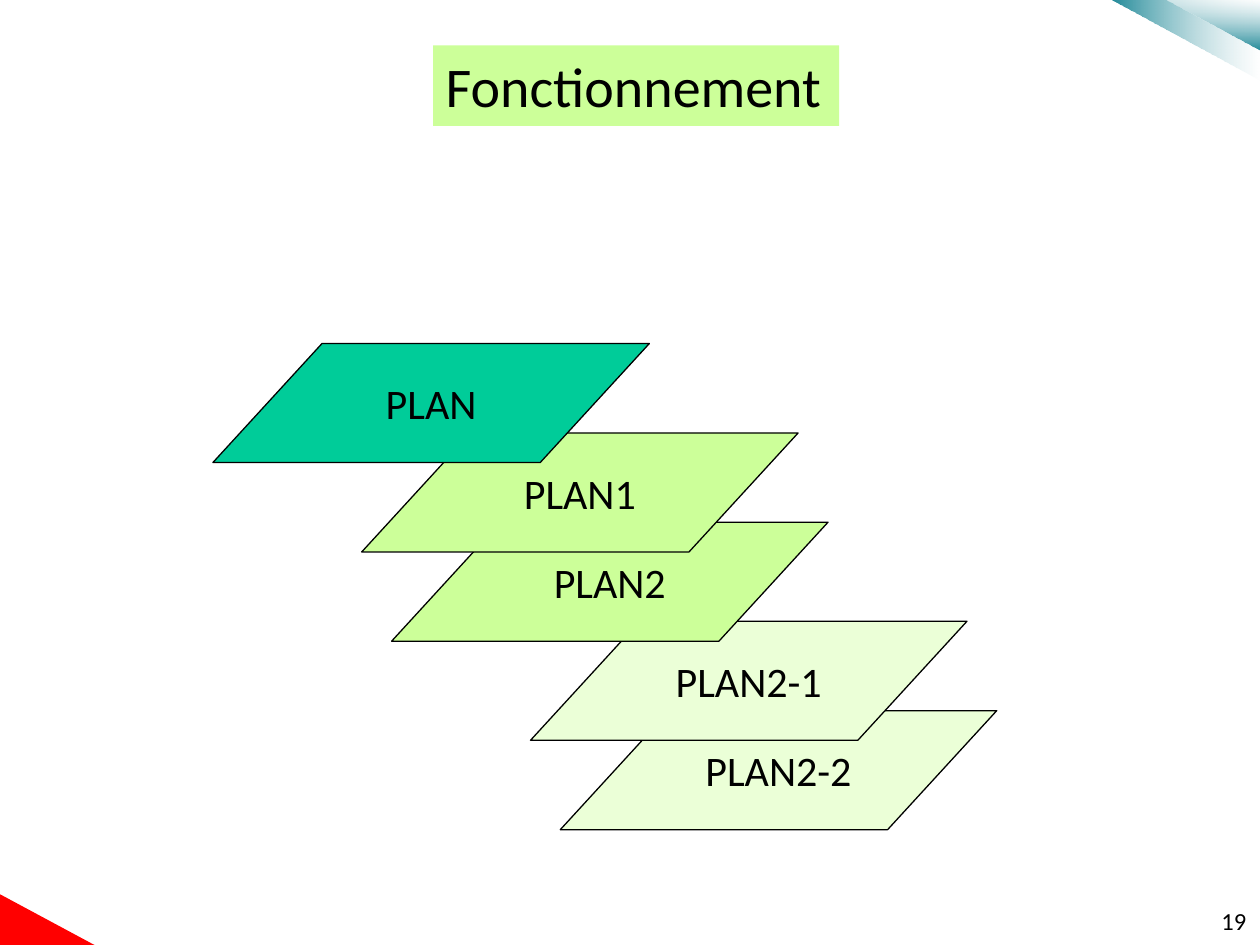
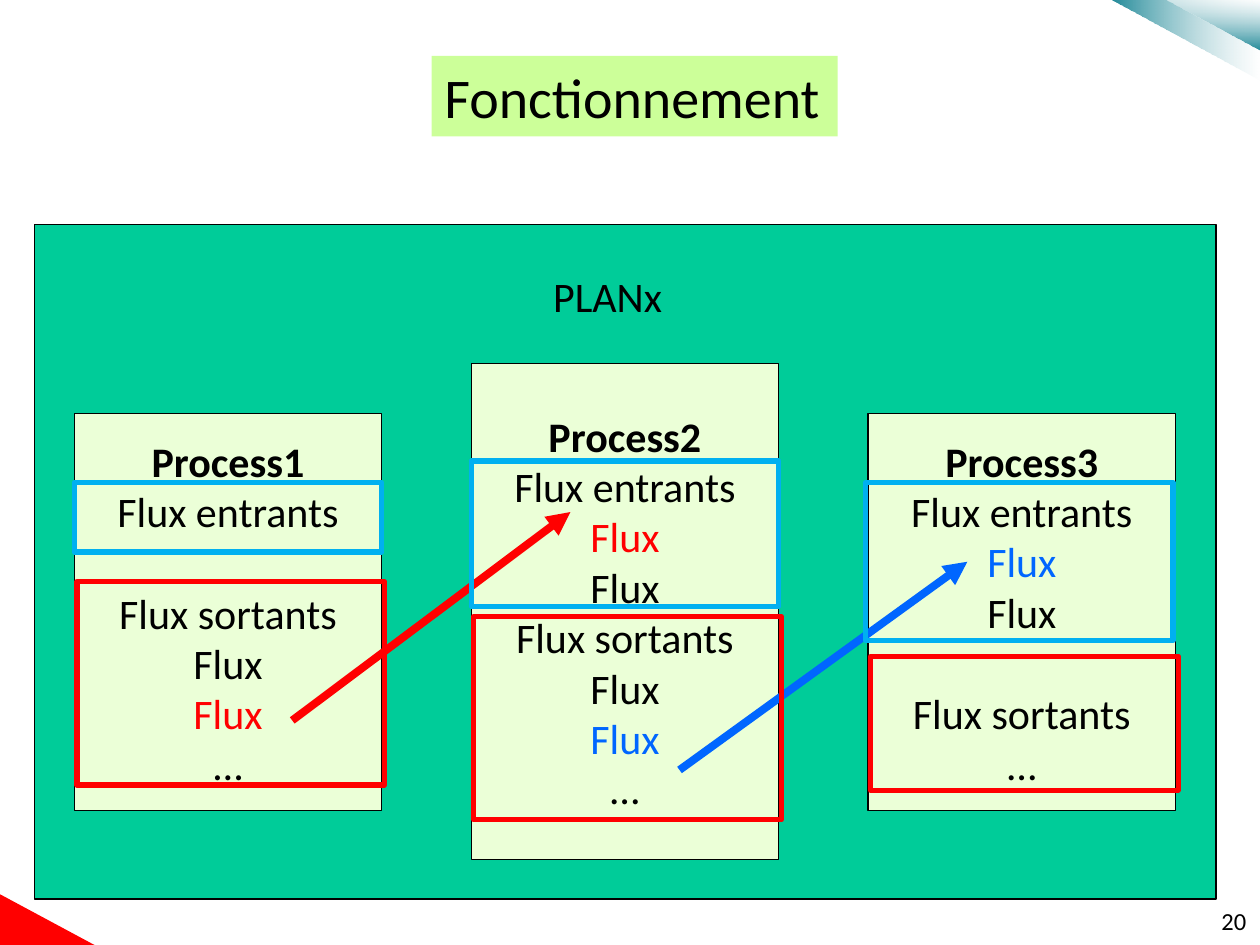
from lxml.etree import SubElement
from pptx import Presentation
from pptx.dml.color import RGBColor
from pptx.enum.shapes import MSO_CONNECTOR as CONN, MSO_SHAPE as SHAPE
from pptx.enum.text import MSO_ANCHOR as ANCHOR, MSO_AUTO_SIZE as AUTO, PP_ALIGN as ALIGN
from pptx.oxml.ns import qn
from pptx.util import Pt

FONT = "Calibri"
BLACK, WHITE, RED, BLUE, SKY = "000000", "FFFFFF", "FF0000", "0066FF", "00B0F0"
GREEN, LIME, PALE, TEAL = "00CC99", "CCFF99", "EBFFD7", "208998"
TITLE = "Fonctionnement"
TITLE_SIZE = (232, 46)

# Corner triangles: points, fill, and gradient angle and end opacity
CORNERS = [
    ([(0, 511), (54, 540), (0, 540)], RED, None),
    ([(634.3, 0), (720, 0), (720, 46)], TEAL, (0, 47)),
    ([(666, 0), (720, 0), (720, 28.8)], TEAL, (90, 57)),
]

# Plans from front to back: name, left, top, fill
PLAN_SIZE = (249.4, 68)
PLANS = [
    ("PLAN", 121.7, 196.3, GREEN),
    ("PLAN1", 206.7, 247.4, LIME),
    ("PLAN2", 223.8, 298.4, LIME),
    ("PLAN2-1", 303.2, 355, PALE),
    ("PLAN2-2", 320.2, 406.1, PALE),
]

# Processes: top and height of the box, (top, height) of both frames,
# then incoming and outgoing flows with their colours
PROCESS_LEFT, PROCESS_STEP, PROCESS_WIDTH = 42.5, 226.8, 175.7
FLOW, DOTS = ("Flux", BLACK), ("…", BLACK)
FLOW_RED, FLOW_BLUE = ("Flux", RED), ("Flux", BLUE)
PROCESSES = [
    dict(name="Process1", top=236.2, height=226.8, gap=29.3,
         frame_in=(0, 275.8, 39.6), frame_out=(1.5, 332.4, 116.2),
         flows_in=[], flows_out=[FLOW, FLOW_RED, DOTS]),
    dict(name="Process2", top=207.8, height=283.5, gap=0,
         frame_in=(0, 263.5, 83), frame_out=(1.5, 352.3, 116.2),
         flows_in=[FLOW_RED, FLOW], flows_out=[FLOW, FLOW_BLUE, DOTS]),
    dict(name="Process3", top=236.2, height=226.8, gap=29.3,
         frame_in=(-1.5, 275.8, 90.3), frame_out=(1.5, 375, 76.6),
         flows_in=[FLOW_BLUE, FLOW], flows_out=[DOTS]),
]
ARROWS = [
    ((167, 411.7), (326, 292.6), RED),
    ((388.3, 440), (552.8, 321), BLUE),
]


def rgb(color):
    return RGBColor.from_string(color)


def write(tf, text, size=24, color=BLACK, bold=False, align=ALIGN.CENTER,
          before=0, wrap=False, anchor=ANCHOR.MIDDLE, new=False):
    """Write one paragraph; new=True adds it after those already there."""
    tf.word_wrap, tf.auto_size, tf.vertical_anchor = wrap, AUTO.NONE, anchor
    p = tf.add_paragraph() if new else tf.paragraphs[0]
    p.alignment, p.space_before = align, Pt(before)
    r = p.add_run()
    r.text = text
    r.font.name, r.font.size, r.font.bold = FONT, Pt(size), bold
    r.font.color.rgb = rgb(color)


def add_box(slide, kind, box, fill=None, line=BLACK, width=0.75):
    sp = slide.shapes.add_shape(kind, *map(Pt, box))
    sp.shadow.inherit = False
    if fill:
        sp.fill.solid()
        sp.fill.fore_color.rgb = rgb(fill)
    else:
        sp.fill.background()
    sp.line.color.rgb, sp.line.width = rgb(line), Pt(width)
    return sp


def add_label(slide, text, box, **style):
    tb = slide.shapes.add_textbox(*map(Pt, box))
    write(tb.text_frame, text, anchor=ANCHOR.TOP, **style)


def add_corner(slide, points, color, gradient):
    (x, y), *rest = [(Pt(px), Pt(py)) for px, py in points]
    builder = slide.shapes.build_freeform(x, y)
    builder.add_line_segments(rest, close=True)
    sp = builder.convert_to_shape()
    sp.shadow.inherit = False
    sp.line.fill.background()
    if not gradient:
        sp.fill.solid()
        sp.fill.fore_color.rgb = rgb(color)
        return
    angle, opacity = gradient
    sp.fill.gradient()
    sp.fill.gradient_angle = angle
    for stop, stop_color in zip(sp.fill.gradient_stops, (color, WHITE)):
        stop.color.rgb = rgb(stop_color)
    end = sp.element.spPr.findall(".//" + qn("a:srgbClr"))[-1]
    SubElement(end, qn("a:alpha"), val=str(opacity * 1000))


def add_arrow(slide, start, end, color):
    c = slide.shapes.add_connector(CONN.STRAIGHT, *map(Pt, start + end))
    c.line.color.rgb, c.line.width = rgb(color), Pt(4.5)
    spPr = c.element.spPr
    SubElement(spPr.find(qn("a:ln")), qn("a:tailEnd"), type="triangle")
    SubElement(spPr, qn("a:effectLst"))


def add_slide(prs, number, title_left, title_top):
    """Add a slide with the shared corners, title and page number."""
    slide = prs.slides.add_slide(prs.slide_layouts[5])
    for corner in CORNERS:
        add_corner(slide, *corner)
    title = slide.shapes.title
    title.left, title.top = Pt(title_left), Pt(title_top)
    title.width, title.height = map(Pt, TITLE_SIZE)
    title.fill.solid()
    title.fill.fore_color.rgb = rgb(LIME)
    write(title.text_frame, TITLE, size=32, align=ALIGN.LEFT, anchor=ANCHOR.TOP)
    add_label(slide, str(number), (666, 514, 53.3, 18.7),
              size=14, align=ALIGN.RIGHT, wrap=True)
    return slide


def add_process(slide, left, process):
    box = (left, process["top"], PROCESS_WIDTH, process["height"])
    tf = add_box(slide, SHAPE.RECTANGLE, box, PALE).text_frame
    write(tf, process["name"], bold=True)
    write(tf, "Flux entrants", new=True)
    for text, color in process["flows_in"]:
        write(tf, text, color=color, new=True)
    write(tf, "Flux sortants", before=process["gap"], new=True)
    for text, color in process["flows_out"]:
        write(tf, text, color=color, new=True)


def build_plans(prs):
    slide = add_slide(prs, 19, 247.5, 26)
    for name, left, top, fill in reversed(PLANS):
        sp = add_box(slide, SHAPE.PARALLELOGRAM, (left, top, *PLAN_SIZE), fill)
        sp.adjustments[0] = 0.917
        write(sp.text_frame, name)


def build_processes(prs):
    slide = add_slide(prs, 20, 246.7, 31.9)
    add_box(slide, SHAPE.RECTANGLE, (19.8, 128.3, 675, 385.4), GREEN)
    add_label(slide, "PLANx", (309, 151.2, 77, 36), align=ALIGN.LEFT)
    lefts = [PROCESS_LEFT + i * PROCESS_STEP for i in range(len(PROCESSES))]
    for left, process in zip(lefts, PROCESSES):
        add_process(slide, left, process)
    for arrow in ARROWS:
        add_arrow(slide, *arrow)
    for key, color in (("frame_in", SKY), ("frame_out", RED)):
        for left, process in zip(lefts, PROCESSES):
            shift, top, height = process[key]
            add_box(slide, SHAPE.RECTANGLE, (left + shift, top, PROCESS_WIDTH, height),
                    line=color, width=3)


def main():
    prs = Presentation()
    prs.slide_width, prs.slide_height = Pt(720), Pt(540)
    build_plans(prs)
    build_processes(prs)
    prs.save("out.pptx")


if __name__ == "__main__":
    main()
